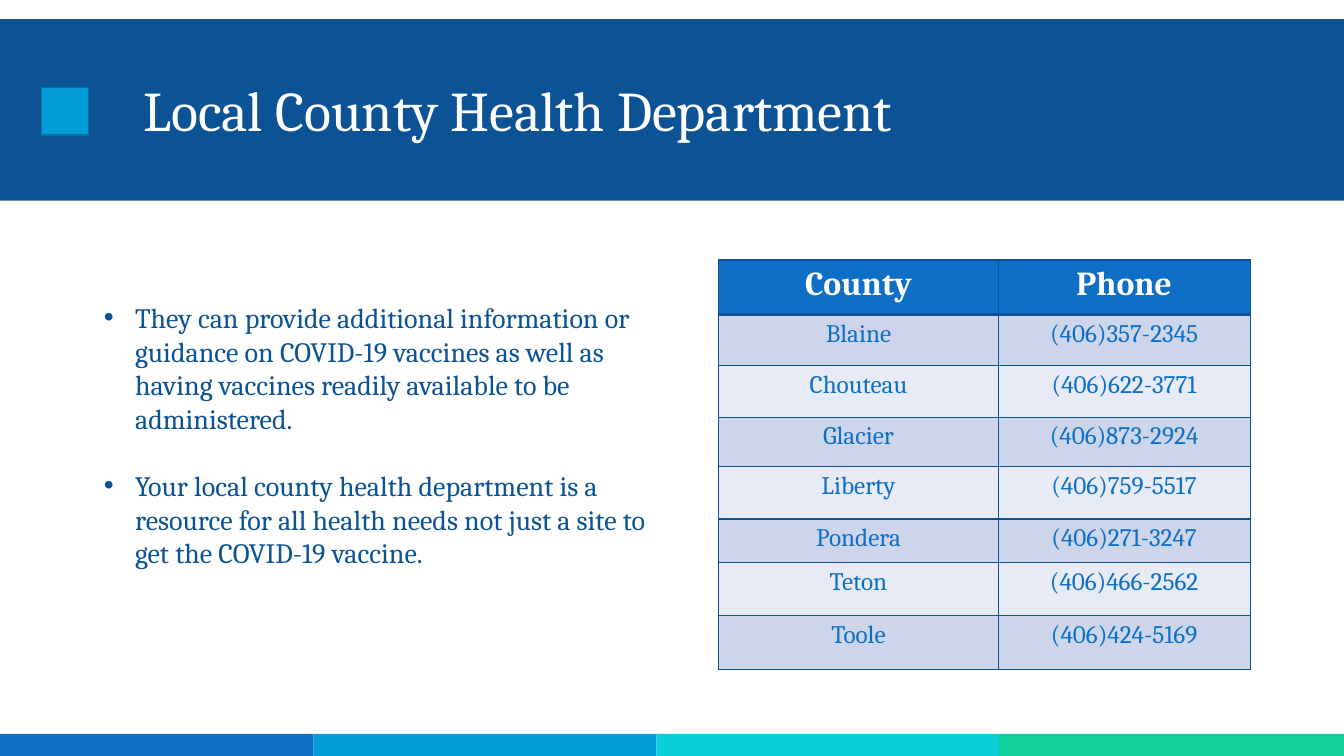
from lxml import etree
from pptx import Presentation
from pptx.dml.color import RGBColor
from pptx.enum.shapes import MSO_SHAPE
from pptx.enum.text import MSO_ANCHOR, MSO_AUTO_SIZE, PP_ALIGN
from pptx.oxml.ns import qn
from pptx.util import Inches, Pt

RECTANGLE = MSO_SHAPE.RECTANGLE
TOP, MIDDLE = MSO_ANCHOR.TOP, MSO_ANCHOR.MIDDLE
LEFT, CENTER = PP_ALIGN.LEFT, PP_ALIGN.CENTER
NO_AUTOFIT = MSO_AUTO_SIZE.NONE

FONT = "Cambria"
WHITE, NAVY, BLUE, SKY = "FFFFFF", "0B5394", "0F6FC6", "009DD9"
SKY_EDGE, TURQUOISE, GREEN = "0074A1", "0BD0D9", "10CF9B"
ROW_FILLS = ("CCD5EA", "E7EBF5")

FOOTER_STRIPES = [(3.11, BLUE), (3.4, SKY), (3.4, TURQUOISE), (3.42, GREEN)]
ADVICE = [
    "They can provide additional information or guidance on COVID-19 vaccines "
    "as well as having vaccines readily available to be administered.",
    "Your local county health department is a resource for all health needs "
    "not just a site to get the COVID-19 vaccine.",
]
CONTACTS = [
    ("County", "Phone"),
    ("Blaine", "(406)357-2345"),
    ("Chouteau", "(406)622-3771"),
    ("Glacier", "(406)873-2924"),
    ("Liberty", "(406)759-5517"),
    ("Pondera", "(406)271-3247"),
    ("Teton", "(406)466-2562"),
    ("Toole", "(406)424-5169"),
]
COLUMN_WIDTHS = (2.77, 2.5)
ROW_HEIGHTS = (0.54, 0.51, 0.51, 0.49, 0.52, 0.43, 0.53, 0.53)


def color(value):
    return RGBColor.from_string(value)


def write(paragraph, text, size, fill, bold=False, align=LEFT, line_spacing=1.0, before=0):
    paragraph.alignment = align
    paragraph.line_spacing = line_spacing
    paragraph.space_before = Pt(before)
    run = paragraph.add_run()
    run.text = text
    run.font.name = FONT
    run.font.size = Pt(size)
    run.font.bold = bold
    run.font.color.rgb = color(fill)


def add_rectangle(slide, left, top, width, height, fill, edge=None):
    shape = slide.shapes.add_shape(
        RECTANGLE, Inches(left), Inches(top), Inches(width), Inches(height))
    shape.shadow.inherit = False
    shape.fill.solid()
    shape.fill.fore_color.rgb = color(fill)
    if edge:
        shape.line.color.rgb = color(edge)
        shape.line.width = Pt(1)
    else:
        shape.line.fill.background()


def place(placeholder, left, top, width, height, anchor):
    """Move a placeholder in front of the shapes and fix its box."""
    placeholder.left, placeholder.top = Inches(left), Inches(top)
    placeholder.width, placeholder.height = Inches(width), Inches(height)
    placeholder.element.getparent().append(placeholder.element)
    frame = placeholder.text_frame
    frame.word_wrap = True
    frame.auto_size = NO_AUTOFIT
    frame.vertical_anchor = anchor
    return frame


def set_bullet(paragraph, indent):
    properties = paragraph._p.get_or_add_pPr()
    properties.set("marL", str(Inches(indent)))
    properties.set("indent", str(-Inches(indent)))
    etree.SubElement(properties, qn("a:buFont"), typeface="Arial")
    etree.SubElement(properties, qn("a:buChar"), char="•")


def set_borders(cell, bottom_width, top_width):
    properties = cell._tc.get_or_add_tcPr()
    widths = {"a:lnL": 1, "a:lnR": 1, "a:lnT": top_width, "a:lnB": bottom_width}
    for position, (tag, width) in enumerate(widths.items()):
        line = etree.Element(qn(tag), w=str(Pt(width)))
        solid = etree.SubElement(line, qn("a:solidFill"))
        etree.SubElement(solid, qn("a:srgbClr"), val=NAVY)
        properties.insert(position, line)


def add_contact_table(slide, left, top):
    frame = slide.shapes.add_table(
        len(CONTACTS), len(COLUMN_WIDTHS), Inches(left), Inches(top),
        Inches(sum(COLUMN_WIDTHS)), Inches(sum(ROW_HEIGHTS)))
    table = frame.table
    for column, width in zip(table.columns, COLUMN_WIDTHS):
        column.width = Inches(width)
    for index, (row, height, texts) in enumerate(zip(table.rows, ROW_HEIGHTS, CONTACTS)):
        row.height = Inches(height)
        header = index == 0
        for cell, text in zip(row.cells, texts):
            cell.fill.solid()
            cell.fill.fore_color.rgb = color(BLUE if header else ROW_FILLS[(index - 1) % 2])
            set_borders(cell, 3 if header else 1, 3 if index == 1 else 1)
            write(cell.text_frame.paragraphs[0], text, 24 if header else 18,
                  WHITE if header else BLUE, bold=header, align=CENTER)


def add_decoration(slide):
    add_rectangle(slide, 0, 0.19, 13.33, 1.8, NAVY)
    left = 0
    for width, fill in FOOTER_STRIPES:
        add_rectangle(slide, left, 7.28, width, 0.22, fill)
        left += width
    add_rectangle(slide, 0.41, 0.87, 0.47, 0.47, SKY, edge=SKY_EDGE)


def add_advice(placeholder):
    frame = place(placeholder, 0.93, 2.58, 5.73, 4.06, TOP)
    frame.margin_top = Inches(0.4)
    for index, text in enumerate(ADVICE):
        paragraph = frame.add_paragraph() if index else frame.paragraphs[0]
        write(paragraph, text, 20, NAVY, before=24 if index else 0)
        set_bullet(paragraph, 0.31)


def main():
    presentation = Presentation()
    presentation.slide_width, presentation.slide_height = Inches(13.33), Inches(7.5)
    slide = presentation.slides.add_slide(presentation.slide_layouts[1])
    add_decoration(slide)
    title = place(slide.shapes.title, 1.32, 0.31, 10.7, 1.65, MIDDLE)
    write(title.paragraphs[0], "Local County Health Department", 40, WHITE, line_spacing=0.85)
    add_contact_table(slide, 7.13, 2.58)
    add_advice(slide.placeholders[1])
    presentation.save("out.pptx")


if __name__ == "__main__":
    main()
